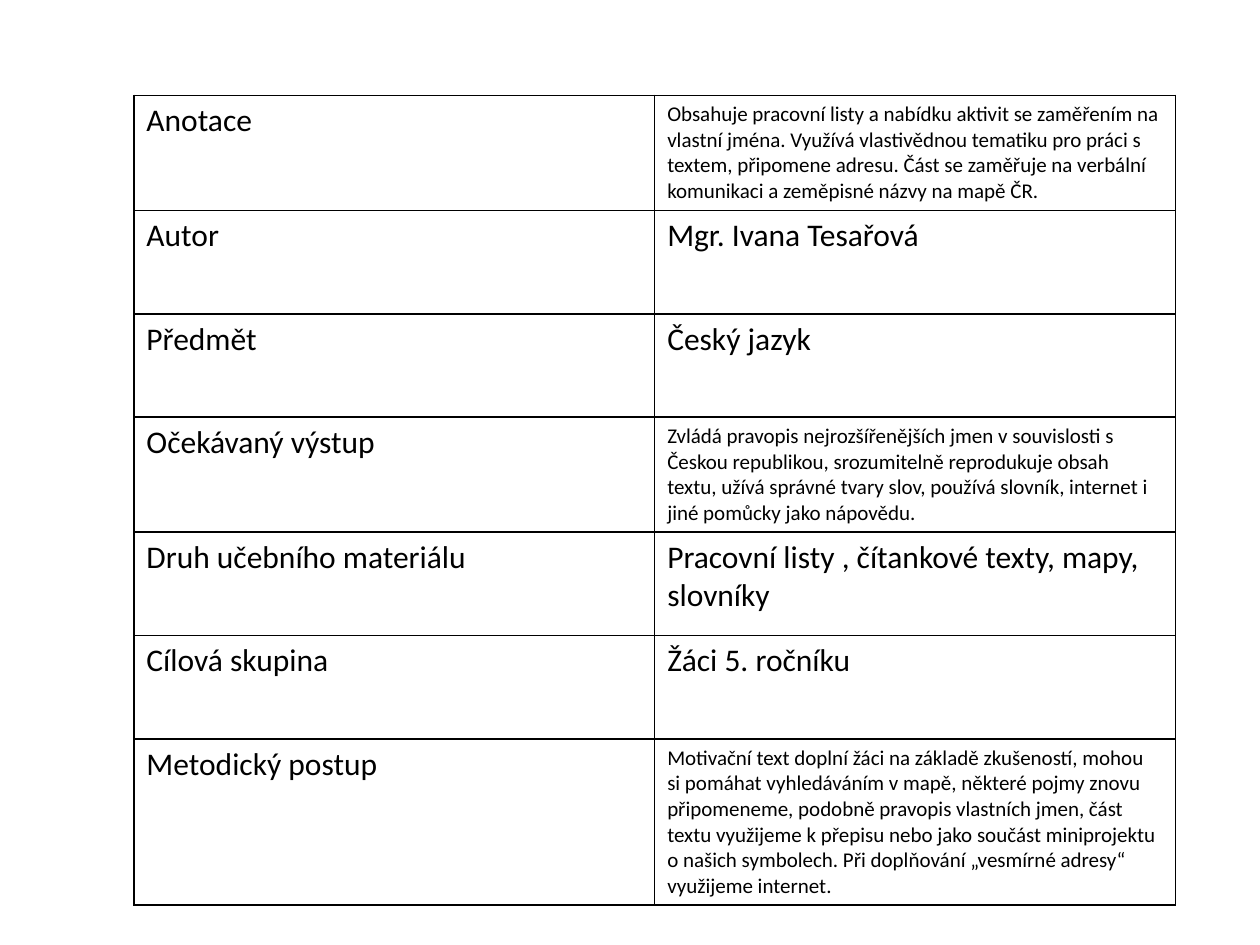
from lxml import etree
from pptx import Presentation
from pptx.dml.color import RGBColor
from pptx.oxml import ns
from pptx.util import Pt

COLORS = {"text": "000000", "border": "000000", "cell": "FFFFFF"}
FONT = "Calibri"
LABEL_SIZE, DETAIL_SIZE = 18, 12

# Label, paragraphs of the value, size of the value
ROWS = [
    ("Anotace",
     ["Obsahuje pracovní listy a nabídku aktivit se zaměřením na vlastní jména. "
      "Využívá vlastivědnou tematiku pro práci s textem, připomene adresu. "
      "Část se zaměřuje na verbální komunikaci a zeměpisné názvy na mapě ČR."],
     DETAIL_SIZE),
    ("Autor", ["Mgr. Ivana Tesařová"], LABEL_SIZE),
    ("Předmět", ["Český jazyk"], LABEL_SIZE),
    ("Očekávaný výstup",
     ["Zvládá pravopis nejrozšířenějších jmen v souvislosti s Českou republikou, "
      "srozumitelně reprodukuje obsah textu, užívá správné tvary slov, "
      "používá slovník, internet i jiné pomůcky jako nápovědu."],
     DETAIL_SIZE),
    ("Druh učebního materiálu",
     ["Pracovní listy , čítankové texty, mapy, slovníky"], LABEL_SIZE),
    ("Cílová skupina", ["Žáci 5. ročníku"], LABEL_SIZE),
    ("Metodický postup",
     ["Motivační text doplní žáci na základě zkušeností, mohou",
      "si pomáhat vyhledáváním v mapě, některé pojmy znovu připomeneme, "
      "podobně pravopis vlastních jmen, část textu využijeme k přepisu nebo "
      "jako součást miniprojektu o našich symbolech. "
      "Při doplňování „vesmírné adresy“ využijeme internet."],
     DETAIL_SIZE),
]


def write_text(frame, paragraphs, size=LABEL_SIZE, color="text"):
    for index, words in enumerate(paragraphs):
        para = frame.paragraphs[0] if index == 0 else frame.add_paragraph()
        span = para.add_run()
        span.text = words
        span.font.name = FONT
        span.font.size = Pt(size)
        span.font.color.rgb = RGBColor.from_string(COLORS[color])


def add_borders(cell, width=1):
    properties = cell._tc.get_or_add_tcPr()
    for side in ("a:lnL", "a:lnR", "a:lnT", "a:lnB"):
        line = etree.SubElement(properties, ns.qn(side), w=str(Pt(width)))
        fill = etree.SubElement(line, ns.qn("a:solidFill"))
        etree.SubElement(fill, ns.qn("a:srgbClr"), val=COLORS["border"])


def add_info_table(page, left, top, width, row_height):
    frame = page.shapes.add_table(len(ROWS), 2, Pt(left), Pt(top),
                                  Pt(width), Pt(row_height * len(ROWS)))
    table = frame.table
    table.first_row = table.horz_banding = False
    for row, (label, value, size) in zip(table.rows, ROWS):
        row.height = Pt(row_height)
        write_text(row.cells[0].text_frame, [label])
        write_text(row.cells[1].text_frame, value, size=size)
    # Borders come before the fill in the cell properties
    for cell in table.iter_cells():
        add_borders(cell)
        cell.fill.solid()
        cell.fill.fore_color.rgb = RGBColor.from_string(COLORS["cell"])


def main():
    deck = Presentation()
    deck.slide_width, deck.slide_height = Pt(720), Pt(540)
    page = deck.slides.add_slide(deck.slide_layouts[6])
    add_info_table(page, left=76.5, top=54.5, width=595.2, row_height=59.1)
    deck.save("out.pptx")


if __name__ == "__main__":
    main()
